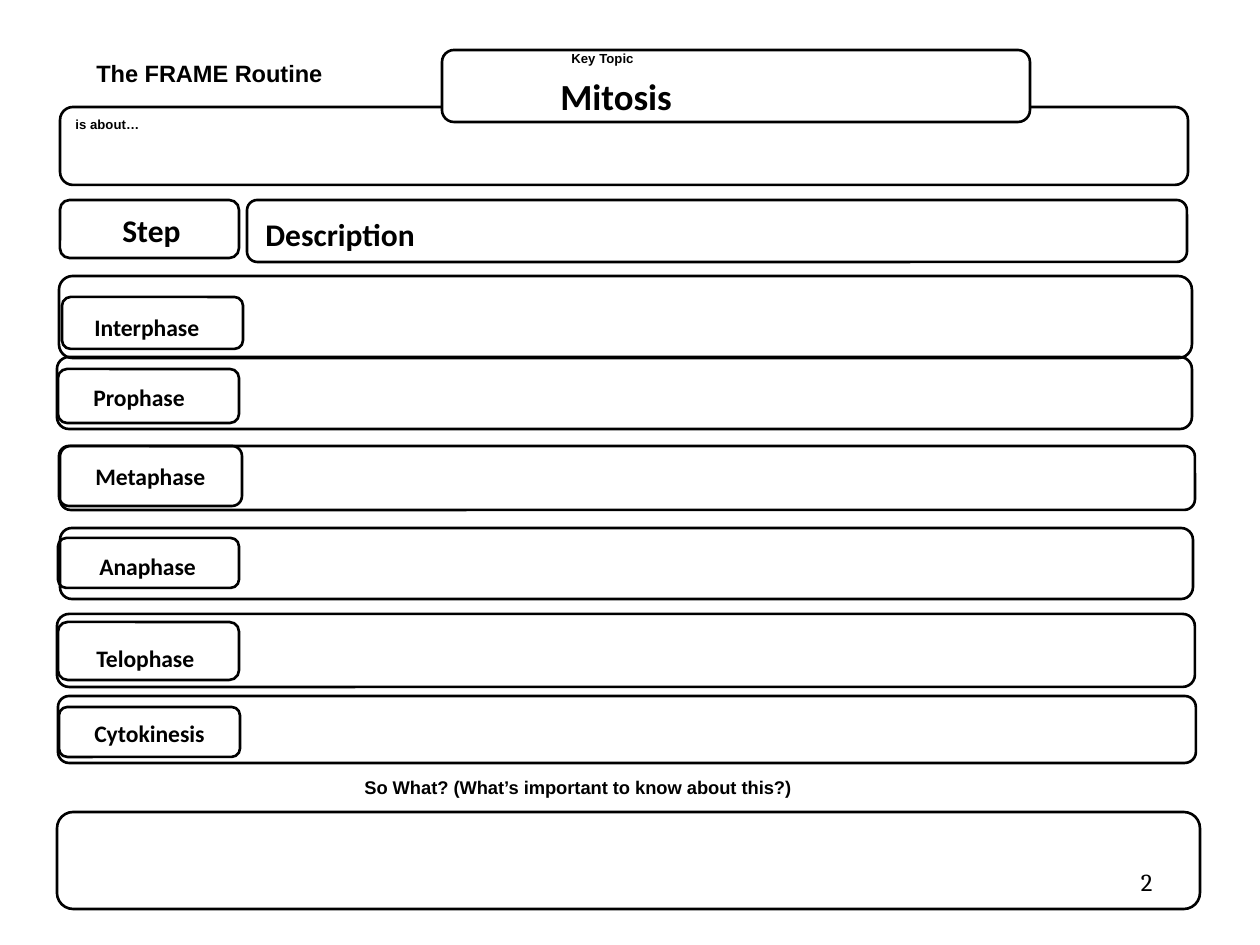
from pptx import Presentation
from pptx.dml.color import RGBColor
from pptx.enum.shapes import MSO_SHAPE as Shape
from pptx.enum.text import PP_ALIGN as Align
from pptx.util import Pt

PX = 914400 // 126
COLORS = {"ink": "000000", "paper": "FFFFFF"}

# Phase, row box, tag box and text box; the last two are relative to the row
PHASES = [
    ("Interphase", (59, 276, 1133, 82), (3, 21, 181, 52), (23, 31, 144, 42)),
    ("Prophase", (57, 357, 1135, 72), (1, 12, 181, 54), (24, 20, 159, 42)),
    ("Metaphase", (60, 446, 1135, 64), (-1, 0, 183, 60), (23, 10, 160, 42)),
    ("Anaphase", (60, 528, 1133, 71), (-2, 10, 181, 50), (27, 18, 127, 42)),
    ("Telophase", (57, 614, 1138, 73), (1, 8, 181, 58), (27, 24, 152, 42)),
    ("Cytokinesis", (58, 696, 1138, 67), (1, 11, 181, 50), (24, 17, 152, 42)),
]


def color(name):
    return RGBColor.from_string(COLORS[name])


def emu(box):
    return [length * PX for length in box]


def inside(box, part):
    """Move a part's box from its region's corner to the slide."""
    return (box[0] + part[0], box[1] + part[1], part[2], part[3])


def add_frame(slide, box, fill=None):
    frame = slide.shapes.add_shape(Shape.ROUNDED_RECTANGLE, *emu(box))
    frame.shadow.inherit = False
    frame.line.color.rgb = color("ink")
    frame.line.width = Pt(1.5)
    if fill:
        frame.fill.solid()
        frame.fill.fore_color.rgb = color(fill)
    else:
        frame.fill.background()


def add_label(slide, box, words, size, face="Calibri", bold=True, align=Align.LEFT):
    label = slide.shapes.add_textbox(*emu(box)).text_frame
    label.word_wrap = align == Align.RIGHT
    paragraph = label.paragraphs[0]
    paragraph.text = words
    paragraph.alignment = align
    font = paragraph.font
    font.name, font.size, font.bold = face, Pt(size), bold
    font.color.rgb = color("ink")


def add_header(slide, box):
    # "is about" frame with the key topic overlapping its top edge
    add_frame(slide, inside(box, (0, 57, 1128, 78)))
    add_frame(slide, inside(box, (382, 0, 588, 72)), "paper")
    add_label(slide, inside(box, (24, 3, 255, 54)), "The FRAME Routine", 13.5, "Arial")
    add_label(slide, inside(box, (499, -6, 88, 38)), "Key Topic", 7.5, "Arial")
    add_label(slide, inside(box, (3, 60, 89, 38)), "is about…", 7.5, "Arial")
    add_label(slide, inside(box, (488, 18, 154, 57)), "Mitosis", 21)


def add_column_heads(slide, box):
    add_frame(slide, inside(box, (0, 0, 179, 58)))
    add_frame(slide, inside(box, (187, 0, 940, 62)))
    add_label(slide, inside(box, (50, 5, 84, 50)), "Step", 18)
    add_label(slide, inside(box, (193, 9, 231, 50)), "Description", 18)


def add_phase(slide, box, name, tag, text):
    add_frame(slide, box)
    add_frame(slide, inside(box, tag))
    add_label(slide, inside(box, text), name, 13.5)


def add_so_what(slide, box):
    add_frame(slide, inside(box, (0, 42, 1143, 97)))
    add_label(slide, inside(box, (295, 0, 464, 45)),
              "So What? (What’s important to know about this?)", 10.5, "Arial")
    # Slide number
    add_label(slide, inside(box, (846, 91, 262, 63)), "2", 14, "Cambria", False, Align.RIGHT)


def main():
    deck = Presentation()
    deck.slide_width, deck.slide_height = emu((1260, 945))
    slide = deck.slides.add_slide(deck.slide_layouts[6])
    add_header(slide, (60, 50, 1128, 135))
    add_column_heads(slide, (60, 200, 1127, 62))
    for name, row, tag, text in PHASES:
        add_phase(slide, row, name, tag, text)
    add_so_what(slide, (57, 770, 1143, 139))
    deck.save("out.pptx")


if __name__ == "__main__":
    main()
